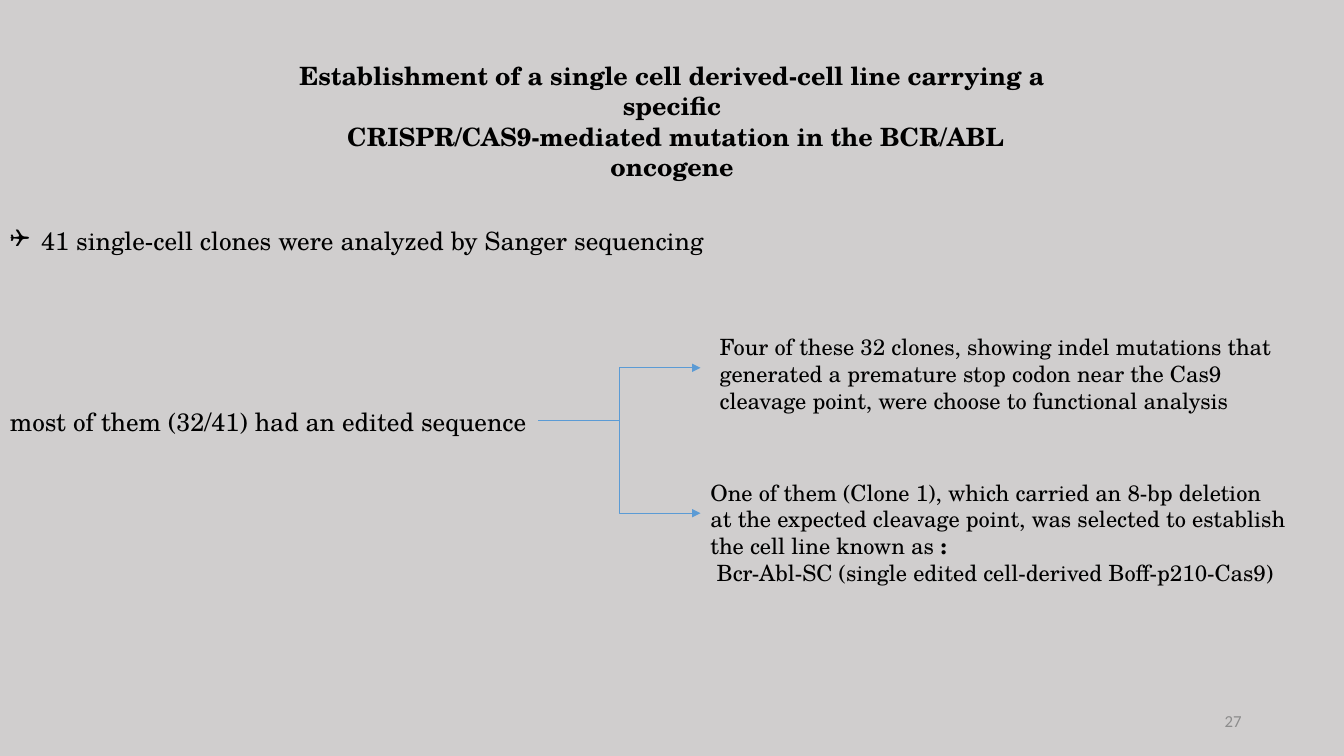
from dataclasses import dataclass
from lxml.etree import SubElement
from pptx import Presentation
from pptx.dml.color import RGBColor
from pptx.enum.shapes import MSO_CONNECTOR
from pptx.enum.text import MSO_ANCHOR, PP_ALIGN
from pptx.oxml.ns import qn
from pptx.util import Inches, Pt


@dataclass(frozen=True)
class Theme:
    ground: str = "D0CECE"
    ink: str = "000000"
    muted: str = "8C8C8C"
    line: str = "5B9BD5"
    serif: str = "TeX Gyre Schola"
    sans: str = "Calibri"
    head: int = 18
    note: int = 16
    small: int = 12
    rule: float = 0.5


THEME = Theme()
COLS, ROWS = 160, 90
CELL = Inches(7.5) / ROWS


def grid(*cells):
    """Turn grid columns and rows into lengths."""
    return [round(c * CELL) for c in cells]


def write(slide, box, paras, size=THEME.head, font=THEME.serif,
          color=THEME.ink, bold=False, align=PP_ALIGN.LEFT,
          anchor=MSO_ANCHOR.TOP):
    """Place a text box; a paragraph is a string or (string, bold) runs."""
    frame = slide.shapes.add_textbox(*grid(*box)).text_frame
    frame.word_wrap = True
    frame.vertical_anchor = anchor
    for i, para in enumerate(paras):
        p = frame.paragraphs[0] if i == 0 else frame.add_paragraph()
        p.alignment = align
        runs = [(para, bold)] if isinstance(para, str) else para
        for words, heavy in runs:
            run = p.add_run()
            run.text = words
            run.font.name = font
            run.font.size = Pt(size)
            run.font.bold = heavy
            run.font.color.rgb = RGBColor.from_string(color)
    return frame


def add_title(slide, box):
    write(slide, box, [
        "Establishment of a single cell derived-cell line carrying a specific",
        " CRISPR/CAS9-mediated mutation in the BCR/ABL oncogene",
    ], bold=True, align=PP_ALIGN.CENTER)


def add_clones(slide, box):
    frame = write(slide, box, [
        "41 single-cell clones were analyzed by Sanger sequencing",
        "most of them (32/41) had an edited sequence",
    ])
    first, last = frame.paragraphs
    # Square bullet with a hanging indent
    props = first._p.get_or_add_pPr()
    props.set("marL", str(Inches(0.31)))
    props.set("indent", str(-Inches(0.31)))
    SubElement(props, qn("a:buFont"), typeface="Wingdings")
    SubElement(props, qn("a:buChar"), char="❑")
    # Five lines of space between the two statements
    last.space_before = Pt(5 * 1.2 * THEME.head)


def add_fork(slide, box, stem):
    """Two elbow arrows from one stem, at a share of the box height."""
    left, top, width, height = box
    for tip in (top, top + height):
        ends = grid(left, top + stem * height, left + width, tip)
        arrow = slide.shapes.add_connector(MSO_CONNECTOR.ELBOW, *ends)
        arrow.line.color.rgb = RGBColor.from_string(THEME.line)
        arrow.line.width = Pt(THEME.rule)
        SubElement(arrow.line._get_or_add_ln(), qn("a:tailEnd"),
                   type="triangle")
        SubElement(arrow._element.spPr, qn("a:effectLst"))


def add_notes(slide, upper, lower):
    write(slide, upper, [
        "Four of these 32 clones, showing indel mutations that",
        "generated a premature stop codon near the Cas9",
        "cleavage point, were choose to functional analysis",
    ], size=THEME.note)
    write(slide, lower, [
        "One of them (Clone 1), which carried an 8-bp deletion",
        "at the expected cleavage point, was selected to establish",
        [("the cell line known as ", False), (":", True)],
        " Bcr-Abl-SC (single edited cell-derived Boff-p210-Cas9)",
    ], size=THEME.note)


def add_number(slide, box):
    write(slide, box, ["27"], size=THEME.small, font=THEME.sans,
          color=THEME.muted, align=PP_ALIGN.RIGHT, anchor=MSO_ANCHOR.MIDDLE)


def main():
    deck = Presentation()
    deck.slide_width, deck.slide_height = grid(COLS, ROWS)
    slide = deck.slides.add_slide(deck.slide_layouts[6])
    fill = slide.background.fill
    fill.solid()
    fill.fore_color.rgb = RGBColor.from_string(THEME.ground)

    # Regions as left, top, width, height in grid cells
    add_number(slide, (113, 83.4, 36, 4.8))
    add_title(slide, (33.5, 6.6, 93, 8.5))
    add_clones(slide, (0, 26.2, 86.2, 37.5))
    add_fork(slide, (64.1, 43.8, 19.3, 17.3), stem=0.36)
    add_notes(slide, (84.5, 39.1, 69.8, 10.9), (83.4, 56.4, 72.8, 14.5))
    deck.save("out.pptx")


if __name__ == "__main__":
    main()
